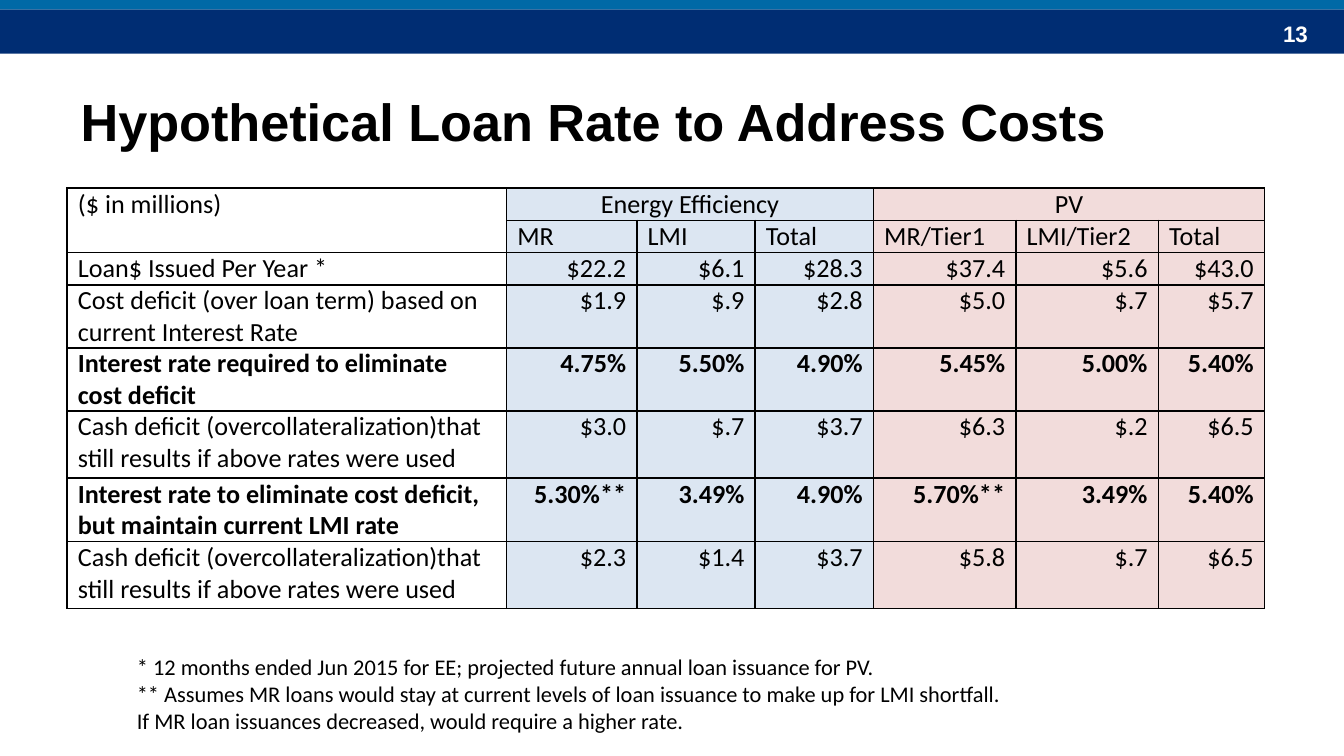
import pptx
import pptx.util
import pptx.dml.color
import pptx.enum.shapes
import pptx.enum.text
import pptx.oxml
import pptx.oxml.ns

Inches = pptx.util.Inches
Align = pptx.enum.text.PP_ALIGN
Anchor = pptx.enum.text.MSO_ANCHOR


def color(hex_string):
    return pptx.dml.color.RGBColor.from_string(hex_string)


def format_paragraph(paragraph, size, font_name, bold=False, hex_string="000000", alignment=Align.LEFT):
    paragraph.alignment = alignment
    paragraph.font.size = pptx.util.Pt(size)
    paragraph.font.name = font_name
    paragraph.font.bold = bold
    paragraph.font.color.rgb = color(hex_string)


# Widescreen slide, 16 to 9
presentation = pptx.Presentation()
presentation.slide_width = Inches(10)
presentation.slide_height = Inches(10 * 9 / 16)
slide = presentation.slides.add_slide(presentation.slide_layouts[5])

# Header bands
for top, height, fill in [(0.07, 0.33, "002D73"), (-0.02, 0.09, "0069A6")]:
    band = slide.shapes.add_shape(
        pptx.enum.shapes.MSO_SHAPE.RECTANGLE, 0, Inches(top), Inches(10), Inches(height))
    band.shadow.inherit = False
    band.fill.solid()
    band.fill.fore_color.rgb = color(fill)
    band.line.fill.background()

# Page number
number_box = slide.shapes.add_textbox(Inches(9.08), Inches(0.1), Inches(0.75), Inches(0.3))
number_box.text_frame.word_wrap = True
number_box.text_frame.text = "13"
format_paragraph(number_box.text_frame.paragraphs[0], 12, "Arial", True, "FFFFFF", Align.RIGHT)

# Title
title = slide.shapes.title
title.left, title.top = Inches(0.5), Inches(0.43)
title.width, title.height = Inches(9), Inches(0.94)
title.text_frame.text = "Hypothetical Loan Rate to Address Costs"
title.text_frame.vertical_anchor = Anchor.MIDDLE
format_paragraph(title.text_frame.paragraphs[0], 28, "Arial", True)

# Loan table
column_widths = [3.27, 0.97, 0.88, 0.88, 1.06, 1.06, 0.79]
row_heights = [0.24, 0.24, 0.24, 0.47, 0.47, 0.5, 0.47, 0.5]
cash_deficit = "Cash deficit (overcollateralization)that still results if above rates were used"
rows = [
    ["($ in millions)", "Energy Efficiency", "", "", "PV", "", ""],
    ["", "MR", "LMI", "Total", "MR/Tier1", "LMI/Tier2", "Total"],
    ["Loan$ Issued Per Year *", "$22.2", "$6.1", "$28.3", "$37.4", "$5.6", "$43.0"],
    ["Cost deficit (over loan term) based on current Interest Rate",
     "$1.9", "$.9", "$2.8", "$5.0", "$.7", "$5.7"],
    ["Interest rate required to eliminate cost deficit",
     "4.75%", "5.50%", "4.90%", "5.45%", "5.00%", "5.40%"],
    [cash_deficit, "$3.0", "$.7", "$3.7", "$6.3", "$.2", "$6.5"],
    ["Interest rate to eliminate cost deficit, but maintain current LMI rate",
     "5.30%**", "3.49%", "4.90%", "5.70%**", "3.49%", "5.40%"],
    [cash_deficit, "$2.3", "$1.4", "$3.7", "$5.8", "$.7", "$6.5"],
]
bold_rows = (4, 6)
table = slide.shapes.add_table(
    len(rows), len(column_widths), Inches(0.5), Inches(1.4),
    Inches(sum(column_widths)), Inches(sum(row_heights))).table
table.first_row = table.horz_banding = False
for column, width in zip(table.columns, column_widths):
    column.width = Inches(width)
for row, height in zip(table.rows, row_heights):
    row.height = Inches(height)

for row_index, texts in enumerate(rows):
    for column_index, text in enumerate(texts):
        cell = table.cell(row_index, column_index)
        cell.margin_left = cell.margin_right = Inches(0.08)
        cell.margin_top = cell.margin_bottom = 0
        cell.text = text
        if column_index == 0:
            alignment = Align.LEFT
            cell.fill.background()
        else:
            alignment = {0: Align.CENTER, 1: Align.LEFT}.get(row_index, Align.RIGHT)
            cell.fill.solid()
            cell.fill.fore_color.rgb = color("DCE6F2" if column_index <= 3 else "F2DCDB")
        format_paragraph(cell.text_frame.paragraphs[0], 14, "Calibri",
                         row_index in bold_rows, alignment=alignment)
        # Borders come before the fill in the cell properties
        properties = cell._tc.get_or_add_tcPr()
        for position, side in enumerate(["lnL", "lnR", "lnT", "lnB"]):
            properties.insert(position, pptx.oxml.parse_xml(
                f'<a:{side} {pptx.oxml.ns.nsdecls("a")} w="12700"><a:solidFill>'
                f'<a:srgbClr val="000000"/></a:solidFill></a:{side}>'))

table.cell(0, 0).merge(table.cell(1, 0))
table.cell(0, 1).merge(table.cell(0, 3))
table.cell(0, 4).merge(table.cell(0, 6))

# Footnotes
footnotes = [
    "* 12 months ended Jun 2015 for EE; projected future annual loan issuance for PV.",
    "** Assumes MR loans would stay at current levels of loan issuance to make up for LMI shortfall.",
    "If MR loan issuances decreased, would require a higher rate.",
]
footnote_box = slide.shapes.add_textbox(Inches(0.92), Inches(4.81), Inches(6.69), Inches(0.71))
footnote_box.text_frame.word_wrap = False
footnote_box.text_frame.text = "\n".join(footnotes)
for paragraph in footnote_box.text_frame.paragraphs:
    format_paragraph(paragraph, 12, "Calibri")

presentation.save("out.pptx")
